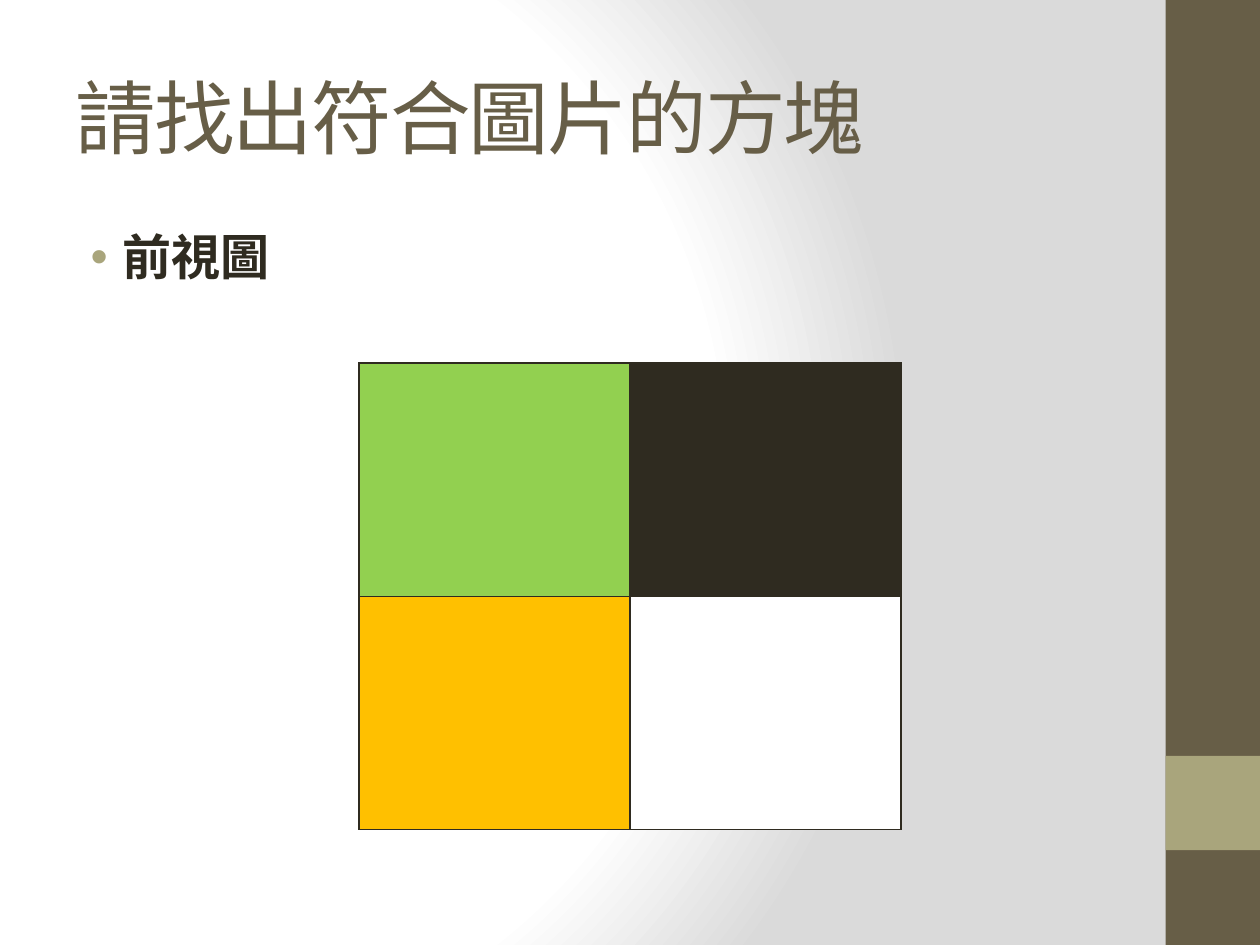
from collections import namedtuple

from lxml.etree import SubElement
from pptx import Presentation
from pptx.dml.color import RGBColor
from pptx.enum.shapes import MSO_SHAPE as Shape
from pptx.enum.text import MSO_ANCHOR as Anchor, MSO_AUTO_SIZE as AutoSize, PP_ALIGN as Align
from pptx.oxml import parse_xml
from pptx.oxml.ns import nsdecls, qn
from pptx.util import Cm, Pt

Box = namedtuple("Box", "left top width height")
OLIVE, SAGE, INK = "675E47", "A9A57C", "2F2B20"
BLOCK_COLORS = [["92D050", INK], ["FFC000", "FFFFFF"]]


def color(value):
    """Turn a hex string into a colour."""
    return RGBColor.from_string(value)


def place(shape, box):
    """Move and size a shape to a box given in centimetres."""
    shape.left, shape.top, shape.width, shape.height = map(Cm, box)


def write(frame, text, font, size, hue, bold=False, anchor=Anchor.TOP, spacing=None):
    """Write one left-aligned paragraph and return it."""
    frame.word_wrap = True
    frame.auto_size = AutoSize.NONE
    frame.vertical_anchor = anchor
    para = frame.paragraphs[0]
    para.alignment = Align.LEFT
    span = para.add_run()
    span.text = text
    span.font.name, span.font.size, span.font.bold = font, Pt(size), bold
    span.font.color.rgb = color(hue)
    if spacing is not None:
        span.font._element.set("spc", str(spacing * 100))
    return para


def paint_background(page):
    """Give the page a radial gradient that darkens to the right."""
    stops = "".join(
        f'<a:gs pos="{position * 1000}"><a:srgbClr val="{hue}"/></a:gs>'
        for position, hue in [(0, "FFFFFF"), (75, "FFFFFF"), (100, "DADADA")]
    )
    page._element.cSld.insert(0, parse_xml(
        f'<p:bg {nsdecls("p", "a")}><p:bgPr><a:gradFill rotWithShape="1">'
        f'<a:gsLst>{stops}</a:gsLst><a:path path="circle">'
        '<a:fillToRect l="20000" t="50000" r="100000" b="50000"/></a:path>'
        '</a:gradFill><a:effectLst/></p:bgPr></p:bg>'
    ))


def add_sidebar(page, box):
    """Draw the side band with its square accent."""
    accent = Box(box.left, box.top + box.height * 0.8, box.width, box.width)
    for area, hue in [(box, OLIVE), (accent, SAGE)]:
        band = page.shapes.add_shape(Shape.RECTANGLE, *map(Cm, area))
        band.shadow.inherit = False
        band.fill.solid()
        band.fill.fore_color.rgb = color(hue)
        band.line.fill.background()


def add_title(page, box):
    """Place and fill the title."""
    title = page.shapes.title
    place(title, box)
    write(title.text_frame, "請找出符合圖片的方塊", font="Cambria", size=46,
          hue=OLIVE, anchor=Anchor.MIDDLE, spacing=-1)


def add_view_name(page, box):
    """Add the bulleted name of the view."""
    frame = page.shapes.add_textbox(*map(Cm, box)).text_frame
    para = write(frame, "前視圖", font="Calibri", size=28, hue=INK, bold=True)
    para.space_before = Pt(5.6)
    properties = para._p.get_or_add_pPr()
    properties.set("marL", str(Cm(0.95)))
    properties.set("indent", str(-Cm(0.64)))
    bullet_color = SubElement(properties, qn("a:buClr"))
    SubElement(bullet_color, qn("a:srgbClr"), val=SAGE)
    SubElement(properties, qn("a:buFont"), typeface="Arial")
    SubElement(properties, qn("a:buChar"), char="•")


def format_cell(cell, hue):
    """Fill a cell and outline its four sides."""
    properties = cell._tc.get_or_add_tcPr()
    for side in ("lnL", "lnR", "lnT", "lnB"):
        line = SubElement(properties, qn(f"a:{side}"), w=str(Pt(1)))
        fill = SubElement(line, qn("a:solidFill"))
        SubElement(fill, qn("a:srgbClr"), val=INK)
    cell.fill.solid()
    cell.fill.fore_color.rgb = color(hue)


def add_blocks(page, box):
    """Add the grid of coloured blocks."""
    rows, columns = len(BLOCK_COLORS), len(BLOCK_COLORS[0])
    table = page.shapes.add_table(rows, columns, *map(Cm, box)).table
    table.first_row = table.horz_banding = False
    for row, hues in enumerate(BLOCK_COLORS):
        for column, hue in enumerate(hues):
            format_cell(table.cell(row, column), hue)


def main():
    """Build the deck and save it."""
    deck = Presentation()
    deck.slide_width, deck.slide_height = Cm(25.4), Cm(19.05)
    page = deck.slides.add_slide(deck.slide_layouts[5])
    paint_background(page)
    add_sidebar(page, Box(23.5, 0, 1.9, 19.05))
    add_title(page, Box(1.27, 0.76, 21.16, 3.18))
    add_view_name(page, Box(1.27, 4.45, 21.16, 13.34))
    add_blocks(page, Box(7.24, 7.32, 10.92, 9.4))
    deck.save("out.pptx")


if __name__ == "__main__":
    main()
